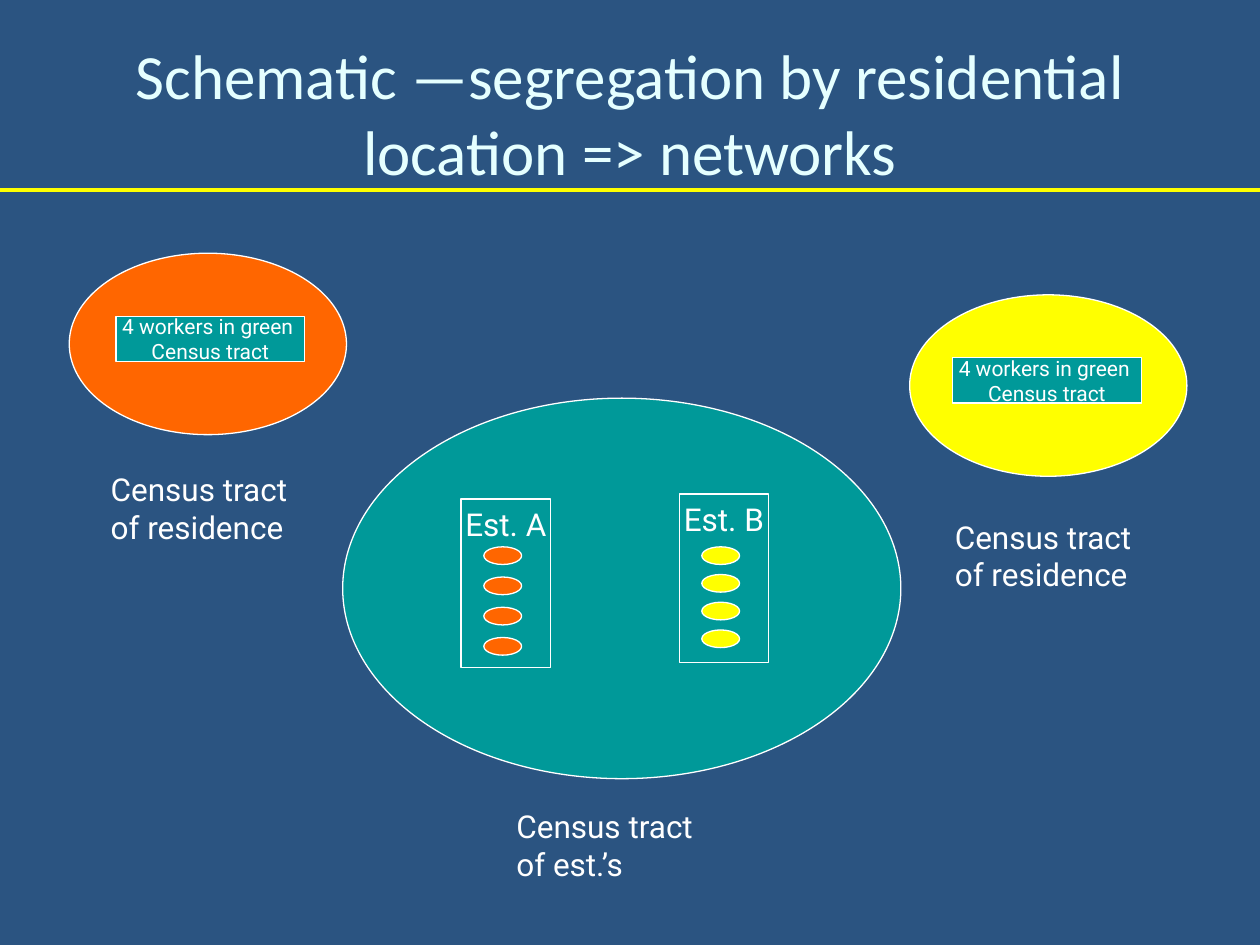
import pptx
import pptx.dml.color
import pptx.enum.shapes
import pptx.enum.text
import pptx.oxml.ns
import pptx.util
from lxml import etree

Inches = pptx.util.Inches
SHAPE = pptx.enum.shapes.MSO_SHAPE
ALIGN = pptx.enum.text.PP_ALIGN
ANCHOR = pptx.enum.text.MSO_ANCHOR

COLORS = {
    "background": "2B5481",
    "title": "E5FFFF",
    "white": "FFFFFF",
    "green": "009999",
    "orange": "FF6600",
    "yellow": "FFFF00",
}


def rgb(name):
    return pptx.dml.color.RGBColor.from_string(COLORS[name])


class Schematic:
    """Holds the style and the current slide."""

    font = "Roboto"
    outline = pptx.util.Pt(0.75)

    def __init__(self, slide):
        self.slide = slide
        slide.background.fill.solid()
        slide.background.fill.fore_color.rgb = rgb("background")

    def set_text(self, frame, lines, size, align, anchor, wrap, color="white", font=None):
        frame.word_wrap = wrap
        frame.vertical_anchor = anchor
        for index, line in enumerate(lines):
            paragraph = frame.add_paragraph() if index else frame.paragraphs[0]
            paragraph.alignment = align
            run = paragraph.add_run()
            run.text = line
            run.font.size = pptx.util.Pt(size)
            run.font.name = font or self.font
            run.font.color.rgb = rgb(color)

    def title(self, text, left, top, width, height):
        box = self.slide.shapes.add_textbox(*map(Inches, (left, top, width, height)))
        self.set_text(box.text_frame, [text], 36, ALIGN.CENTER, ANCHOR.MIDDLE, True,
                      "title", "Calibri")

    def caption(self, text, left, top):
        box = self.slide.shapes.add_textbox(*map(Inches, (left, top, 1.77, 0.7)))
        self.set_text(box.text_frame, [text], 18, ALIGN.LEFT, ANCHOR.TOP, True)

    def shape(self, kind, fill, left, top, width, height):
        shape = self.slide.shapes.add_shape(kind, *map(Inches, (left, top, width, height)))
        shape.shadow.inherit = False
        shape.fill.solid()
        shape.fill.fore_color.rgb = rgb(fill)
        shape.line.color.rgb = rgb("white")
        shape.line.width = self.outline
        return shape

    def ellipse(self, fill, left, top, width, height):
        self.shape(SHAPE.OVAL, fill, left, top, width, height)

    def label_box(self, lines, left, top, width, height, size, anchor):
        box = self.shape(SHAPE.RECTANGLE, "green", left, top, width, height)
        self.set_text(box.text_frame, lines, size, ALIGN.CENTER, anchor, False)

    def residence(self, fill, left, top, box_left, caption_left, caption_top):
        self.ellipse(fill, left, top, 2.2, 1.44)
        self.label_box(["4 workers in green ", "Census tract"],
                       box_left, top + 0.5, 1.5, 0.36, 12, ANCHOR.MIDDLE)
        self.caption("Census tract of residence", caption_left, caption_top)

    def establishment(self, name, fill, left, top, worker_step):
        self.label_box([name], left, top, 0.71, 1.34, 18, ANCHOR.TOP)
        for worker in range(4):
            self.ellipse(fill, left + 0.18, 4.34 + worker * worker_step, 0.3, 0.14)

    def rule(self, y):
        rule = self.slide.shapes.add_connector(
            pptx.enum.shapes.MSO_CONNECTOR.STRAIGHT,
            Inches(0), Inches(y), Inches(10), Inches(y))
        rule.line.color.rgb = rgb("yellow")
        rule.line.width = pptx.util.Pt(2)
        properties = rule._element.spPr
        etree.SubElement(properties, pptx.oxml.ns.qn("a:effectLst"))


def main():
    deck = pptx.Presentation()
    deck.slide_width, deck.slide_height = Inches(10), Inches(7.5)
    schematic = Schematic(deck.slides.add_slide(deck.slide_layouts[6]))

    # Heading
    schematic.title("Schematic —segregation by residential location => networks",
                    0.5, 0.14, 9, 1.5)
    schematic.rule(1.51)

    # Tract of the workplaces
    schematic.ellipse("green", 2.72, 3.16, 4.43, 3.02)
    schematic.caption("Census tract of est.’s", 4, 6.36)
    schematic.establishment("Est. A", "orange", 3.66, 3.96, 0.24)
    schematic.establishment("Est. B", "yellow", 5.39, 3.92, 0.22)

    # Tracts where the workers live
    schematic.residence("orange", 0.55, 2.01, 0.92, 0.78, 3.68)
    schematic.residence("yellow", 7.22, 2.34, 7.56, 7.48, 4.06)

    deck.save("out.pptx")


if __name__ == "__main__":
    main()
